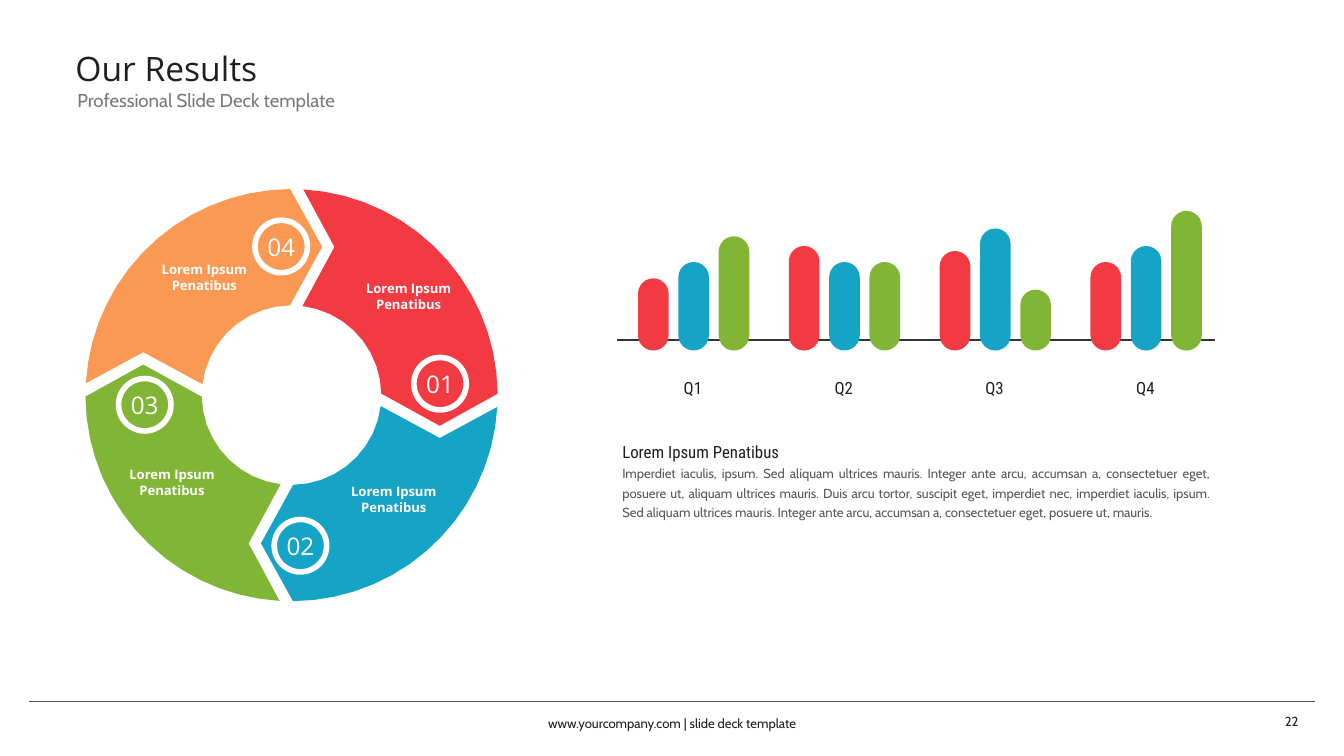
from math import cos, radians, sin

from lxml import etree
from pptx import Presentation
from pptx.dml.color import RGBColor
from pptx.enum import shapes, text
from pptx.oxml import ns
from pptx.util import Pt

THEME = {
    "ink": "1F1F1F", "subtitle": "797979", "grey": "575757", "axis": "353535",
    "white": "FFFFFF", "red": "F23A43", "blue": "15A4C6", "green": "81B535",
    "orange": "F99953",
    "sans": "Open Sans", "body": "Cabin", "narrow": "Roboto Condensed",
    "title_size": 18, "number_size": 13, "subtitle_size": 10,
    "heading_size": 9, "small_size": 7,
}
TITLE = "Our Results"
SUBTITLE = "Professional Slide Deck template"
FOOTER = "www.yourcompany.com | slide deck template"
PAGE_NUMBER = "22"
HEADING = "Lorem Ipsum Penatibus"
BODY = (
    "Imperdiet iaculis, ipsum. Sed aliquam ultrices mauris. Integer ante arcu, "
    "accumsan a, consectetuer eget, posuere ut, aliquam ultrices mauris. Duis arcu "
    "tortor, suscipit eget, imperdiet nec, imperdiet iaculis, ipsum. Sed aliquam "
    "ultrices mauris. Integer ante arcu, accumsan a, consectetuer eget, posuere ut, "
    "mauris."
)
# Quarter name and bar heights in points
QUARTERS = [
    ("Q1", (38.7, 47.4, 61.2)),
    ("Q2", (56, 47.4, 47.4)),
    ("Q3", (53.3, 65.4, 32.6)),
    ("Q4", (47.4, 56, 74.8)),
]
BAR_COLOURS = ("red", "blue", "green")
# Number, colour, badge corner, label text, label box
SEGMENTS = [
    ("01", "red", (221.7, 191.5), "Lorem Ipsum Penatibus", (190.8, 149, 56.2, 20.2)),
    ("02", "blue", (146.9, 278.3), "Lorem Ipsum Penatibus", (180, 257.5, 61.9, 20.2)),
    ("03", "green", (63.5, 202.8), "Lorem Ipsum Penatibus", (61.2, 248.4, 61.9, 20.2)),
    ("04", "orange", (136.6, 118), "Lorem Ipsum Penatibus", (78.5, 138.8, 61.9, 20.2)),
]
RING_CENTRE = (156.2, 211.7)
OUTER_RADIUS, INNER_RADIUS = 110.4, 48.1
SEGMENT_TIP, SEGMENT_NOTCH = (79.4, 16.4), (23, -79.4)
BADGE = 28.1
BAR_LEFT, BAR_BOTTOM, BAR_WIDTH = 341.8, 187.8, 16.4
BAR_STEP, QUARTER_STEP = 21.6, 80.8
INSETS = (3, 1.5, 3, 1.5)


def colour(name):
    return RGBColor.from_string(THEME[name])


def points(values):
    return [Pt(value) for value in values]


def write(box, content, font="sans", size="small_size", fill="white", bold=False,
          align="CENTER", anchor="TOP", insets=INSETS, spacing=None, before=0,
          append=False):
    frame = box.text_frame
    frame.word_wrap = True
    frame.auto_size = text.MSO_AUTO_SIZE.NONE
    frame.vertical_anchor = text.MSO_ANCHOR[anchor]
    (frame.margin_left, frame.margin_top,
     frame.margin_right, frame.margin_bottom) = points(insets)
    para = frame.add_paragraph() if append else frame.paragraphs[0]
    para.alignment = text.PP_ALIGN[align]
    para.space_before = Pt(before)
    if spacing:
        para.line_spacing = spacing
    span = para.add_run()
    span.text = content
    span.font.name = THEME[font]
    span.font.size = Pt(THEME[size])
    span.font.bold = bold
    span.font.color.rgb = colour(fill)


def add_text(page, area, content, **style):
    box = page.shapes.add_textbox(*points(area))
    write(box, content, **style)
    return box


def add_rule(page, left, right, y, line, width):
    rule = page.shapes.add_connector(
        shapes.MSO_CONNECTOR.STRAIGHT, *points((left, y, right, y)))
    rule.line.color.rgb = colour(line)
    rule.line.width = Pt(width)
    etree.SubElement(rule._element.spPr, ns.qn("a:effectLst"))


def paint(shape, fill):
    shape.shadow.inherit = False
    shape.fill.solid()
    shape.fill.fore_color.rgb = colour(fill)
    shape.line.fill.background()


def arc(radius, start, end, steps):
    angles = [radians(start + (end - start) * i / steps) for i in range(steps + 1)]
    return [(radius * cos(a), radius * sin(a)) for a in angles]


def add_segment(page, turns, fill):
    """Draw the ring's first segment, turned clockwise by quarter turns."""
    outline = (arc(OUTER_RADIUS, -86.7, -0.4, 15) + [SEGMENT_TIP]
               + arc(INNER_RADIUS, -1, -83, 9) + [SEGMENT_NOTCH])
    for _ in range(turns):
        outline = [(-y, x) for x, y in outline]
    start, *rest = [(Pt(RING_CENTRE[0] + x), Pt(RING_CENTRE[1] + y))
                    for x, y in outline]
    builder = page.shapes.build_freeform(*start)
    builder.add_line_segments(rest, close=True)
    paint(builder.convert_to_shape(), fill)


def add_ring(page):
    for turns, (_, fill, _, _, _) in enumerate(SEGMENTS):
        add_segment(page, turns, fill)
    for number, _, corner, label, area in SEGMENTS:
        badge = page.shapes.add_shape(
            shapes.MSO_SHAPE.OVAL, *points((*corner, BADGE, BADGE)))
        badge.shadow.inherit = False
        badge.fill.background()
        badge.line.color.rgb = colour("white")
        badge.line.width = Pt(3)
        write(badge, number, size="number_size", anchor="MIDDLE", insets=(0, 0, 0, 0))
        add_text(page, area, label, bold=True)


def add_bars(page):
    add_rule(page, 330.6, 651, 182.2, "axis", 1)
    for quarter, (name, heights) in enumerate(QUARTERS):
        left = BAR_LEFT + quarter * QUARTER_STEP
        for index, (height, fill) in enumerate(zip(heights, BAR_COLOURS)):
            area = (left + index * BAR_STEP, BAR_BOTTOM - height, BAR_WIDTH, height)
            bar = page.shapes.add_shape(
                shapes.MSO_SHAPE.ROUNDED_RECTANGLE, *points(area))
            bar.adjustments[0] = 0.5
            paint(bar, fill)
        middle = left + BAR_STEP + BAR_WIDTH / 2
        add_text(page, (middle - 12.6, 199.4, 24.4, 16.6), name, font="narrow",
                 size="heading_size", fill="ink", insets=(0, 3, 0, 3))


def main():
    deck = Presentation()
    deck.slide_width, deck.slide_height = Pt(720), Pt(405)
    page = deck.slides.add_slide(deck.slide_layouts[5])

    title = page.shapes.title
    title.left, title.top, title.width, title.height = points((37.4, 19, 481.7, 30.2))
    write(title, TITLE, size="title_size", fill="ink", align="LEFT",
          anchor="BOTTOM", spacing=0.9)
    add_text(page, (38.4, 47.5, 188.6, 13.7), SUBTITLE, font="body",
             size="subtitle_size", fill="subtitle", align="LEFT", anchor="MIDDLE",
             spacing=0.9, before=3.8)

    add_bars(page)
    summary = add_text(page, (330.4, 229.6, 320.6, 51.1), HEADING, font="narrow",
                       size="heading_size", fill="ink", align="JUSTIFY", spacing=1.5)
    write(summary, BODY, font="body", fill="grey", align="JUSTIFY", spacing=1.25,
          append=True)
    add_ring(page)

    add_rule(page, 15.8, 704.4, 375.8, "grey", 0.5)
    add_text(page, (238.3, 375.5, 243.4, 21.6), FOOTER, font="body", fill="ink",
             anchor="MIDDLE", spacing=1.25)
    add_text(page, (536.6, 375.5, 162, 21.6), PAGE_NUMBER, font="body", fill="ink",
             align="RIGHT", anchor="MIDDLE")
    deck.save("out.pptx")


if __name__ == "__main__":
    main()
